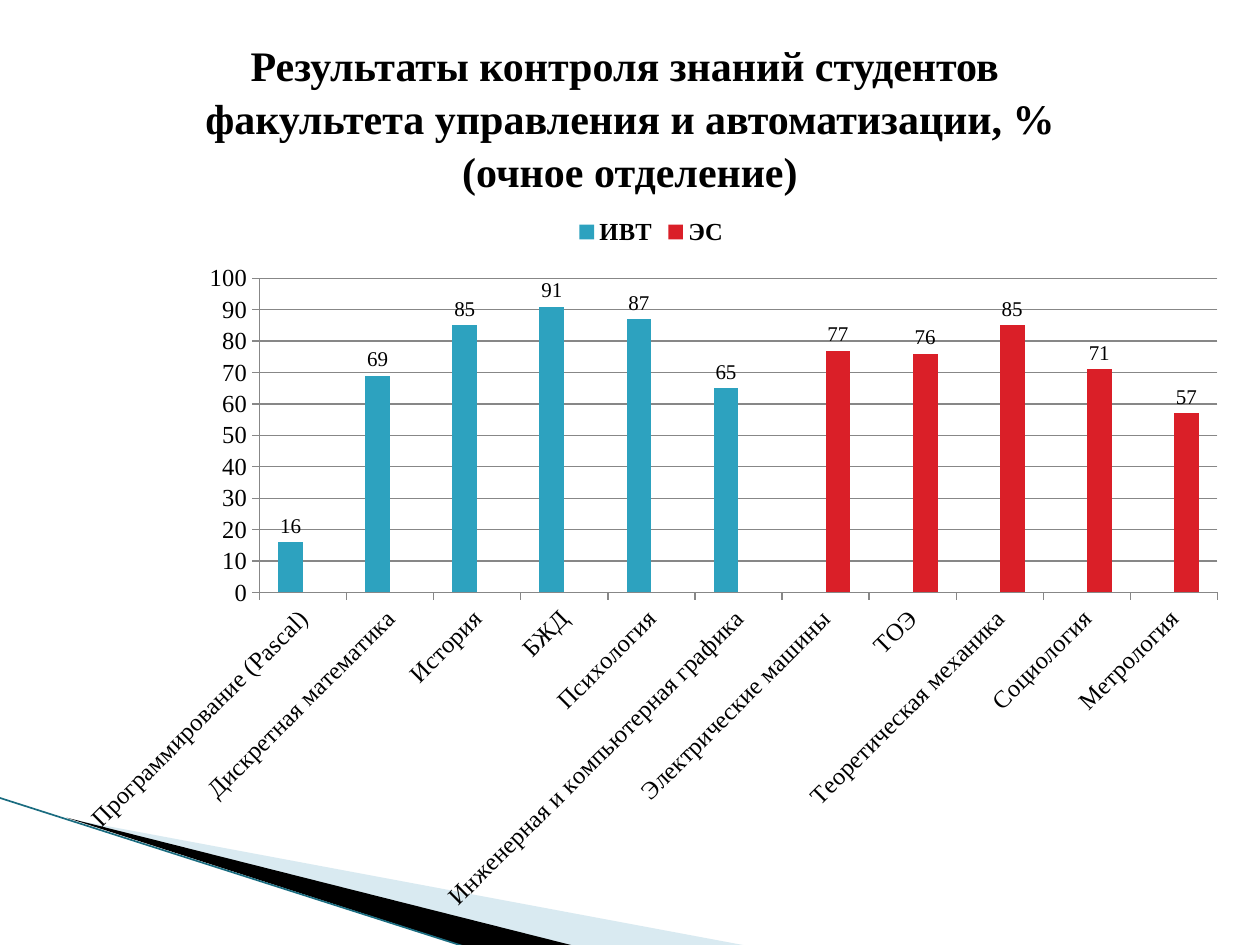
from lxml import etree
from pptx import Presentation
from pptx import util as u
from pptx.chart.data import CategoryChartData
from pptx.dml.color import RGBColor
from pptx.enum import chart as ch, shapes, text
from pptx.oxml import parse_xml
from pptx.oxml.ns import nsdecls, qn

BLACK = RGBColor(0x00, 0x00, 0x00)
PALE = RGBColor(0xA0, 0xCB, 0xDC)
DEEP = RGBColor(0x1A, 0x6C, 0x80)
TEAL = RGBColor(0x2D, 0xA2, 0xBF)
RED = RGBColor(0xDA, 0x1F, 0x28)
GRAY = RGBColor(0x87, 0x87, 0x87)
FONT = "Times New Roman"

TITLE = ("Результаты контроля знаний студентов \v"
         "факультета управления и автоматизации, %\v"
         "(очное отделение)")
COMPUTING = [("Программирование (Pascal)", 16), ("Дискретная математика", 69),
             ("История", 85), ("БЖД", 91), ("Психология", 87),
             ("Инженерная и компьютерная графика", 65)]
POWER = [("Электрические машины", 77), ("ТОЭ", 76),
         ("Теоретическая механика", 85), ("Социология", 71),
         ("Метрология", 57)]


class Deck:
    def __init__(self, prs):
        self.slide = prs.slides.add_slide(prs.slide_layouts[5])
        self.shapes = self.slide.shapes

    def style(self, font, size, bold=False):
        font.name = FONT
        font.size = u.Pt(size)
        font.bold = bold
        font.color.rgb = BLACK

    def title(self, words, box):
        title = self.shapes.title
        title.left, title.top, title.width, title.height = map(u.Inches, box)
        frame = title.text_frame
        frame.word_wrap = True
        frame.vertical_anchor = text.MSO_ANCHOR.MIDDLE
        frame.text = words
        para = frame.paragraphs[0]
        para.alignment = text.PP_ALIGN.CENTER
        para.line_spacing = 1.05
        self.style(para.font, 24, True)

    def wedge(self, points, color, alpha=None):
        first, *rest = [(u.Inches(x), u.Inches(y)) for x, y in points]
        pen = self.shapes.build_freeform(*first)
        pen.add_line_segments(rest)
        shape = pen.convert_to_shape()
        shape.shadow.inherit = False
        shape.fill.solid()
        shape.fill.fore_color.rgb = color
        shape.line.fill.background()
        if alpha:
            tint = shape.fill._xPr.find(".//" + qn("a:srgbClr"))
            etree.SubElement(tint, qn("a:alpha")).set("val", str(alpha * 1000))

    def line(self, start, end, color, width):
        line = self.shapes.add_connector(
            shapes.MSO_CONNECTOR.STRAIGHT, *map(u.Inches, start + end))
        line.line.color.rgb = color
        line.line.width = u.Pt(width)
        etree.SubElement(line._element.spPr, qn("a:effectLst"))

    def chart(self, cats, series, box):
        data = CategoryChartData()
        data.categories = cats
        for name, vals, color in series:
            data.add_series(name, vals)
        chart = self.shapes.add_chart(
            ch.XL_CHART_TYPE.COLUMN_CLUSTERED, *map(u.Inches, box), data).chart
        self.style(chart.font, 14)
        chart.has_title = False
        chart.has_legend = True
        chart.legend.position = ch.XL_LEGEND_POSITION.TOP
        chart.legend.include_in_layout = False
        self.style(chart.legend.font, 14, True)
        plot = chart.plots[0]
        plot.vary_by_categories = False
        plot.gap_width = 150
        plot.overlap = 0
        for bars, (name, vals, color) in zip(plot.series, series):
            bars.format.fill.solid()
            bars.format.fill.fore_color.rgb = color
            labels = bars.data_labels
            labels.show_value = True
            labels.position = ch.XL_LABEL_POSITION.OUTSIDE_END
            self.style(labels.font, 12)
        self.axes(chart)
        self.frame(chart, x=0.167, y=0.103, w=0.814, h=0.436)

    def axes(self, chart):
        for axis in (chart.category_axis, chart.value_axis):
            axis.major_tick_mark = ch.XL_TICK_MARK.OUTSIDE
            axis.format.line.color.rgb = GRAY
            self.style(axis.tick_labels.font, 14)
        body = chart.category_axis._element.find(".//" + qn("a:bodyPr"))
        body.set("rot", "-2700000")
        value = chart.value_axis
        value.minimum_scale, value.maximum_scale = 0, 100
        value.major_unit = 10
        value.has_major_gridlines = True
        value.major_gridlines.format.line.color.rgb = GRAY

    def frame(self, chart, **part):
        area = chart._chartSpace.chart.plotArea
        for old in area.findall(qn("c:layout")):
            area.remove(old)
        sizes = "".join(f'<c:{k} val="{v}"/>' for k, v in part.items())
        area.insert(0, parse_xml(
            f'<c:layout {nsdecls("c")}><c:manualLayout>'
            '<c:layoutTarget val="inner"/><c:xMode val="edge"/>'
            f'<c:yMode val="edge"/>{sizes}</c:manualLayout></c:layout>'))


def main():
    prs = Presentation()
    prs.slide_width, prs.slide_height = u.Inches(10), u.Inches(7.5)
    deck = Deck(prs)
    deck.wedge([(0.55, 6.5), (5.95, 7.51), (4.56, 7.51)], PALE, 40)
    deck.wedge([(0.53, 6.49), (4.57, 7.51), (3.72, 7.52)], BLACK)
    deck.line((-0.01, 6.33), (3.71, 7.52), DEEP, 0.95)
    deck.title(TITLE, (0.5, 0.3, 9, 1.25))
    cats = [name for name, score in COMPUTING + POWER]
    first = [score for name, score in COMPUTING] + [None] * len(POWER)
    second = [None] * len(COMPUTING) + [score for name, score in POWER]
    deck.chart(cats, [("ИВТ", first, TEAL), ("ЭС", second, RED)],
               (0.5, 1.62, 9.34, 5.72))
    prs.save("out.pptx")


if __name__ == "__main__":
    main()
